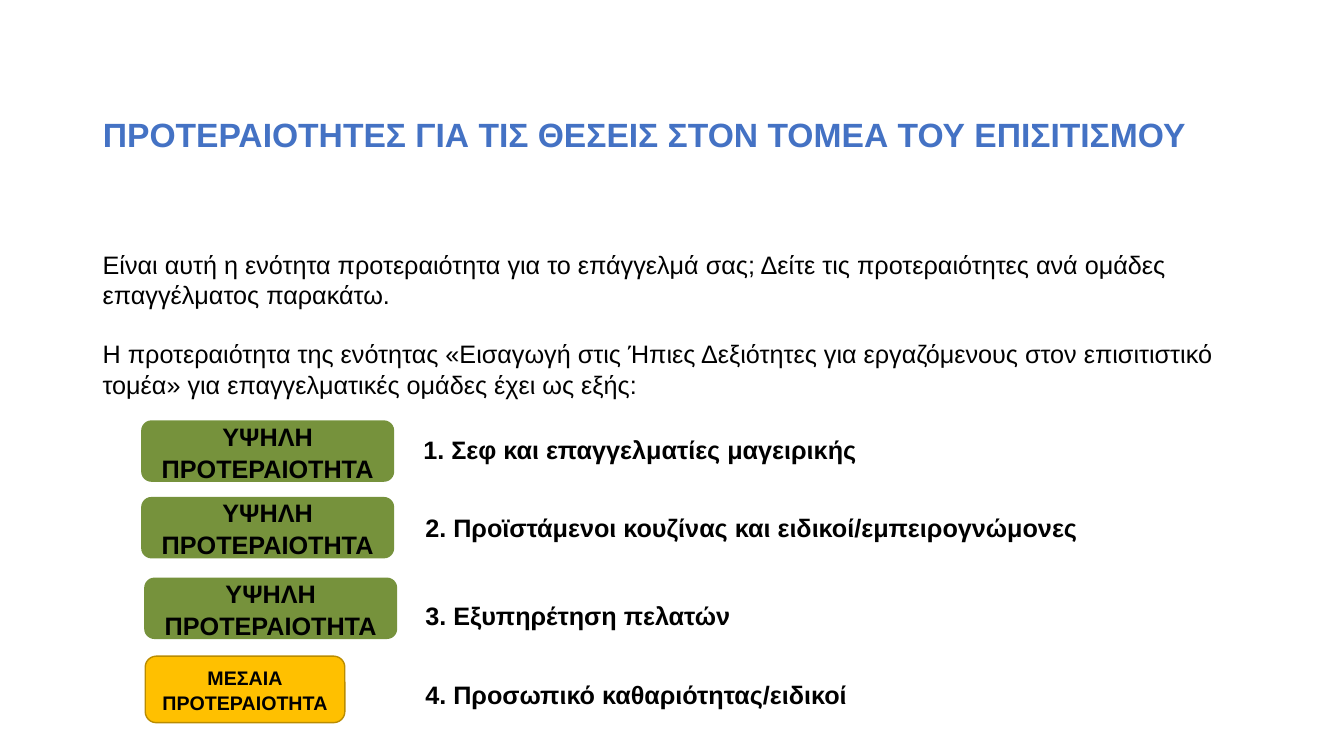
"""Builds the slide of training priorities for catering jobs."""
from dataclasses import dataclass

from pptx import Presentation
from pptx import util as u
from pptx.dml.color import RGBColor
from pptx.enum import shapes, text

PX = 9144
BLUE, BLACK, GREEN, AMBER, BROWN = "4472C4", "000000", "76923C", "FFC000", "BA8C00"
HIGH, MEDIUM = "ΥΨΗΛΗ ΠΡΟΤΕΡΑΙΟΤΗΤΑ", "ΜΕΣΑΙΑ ΠΡΟΤΕΡΑΙΟΤΗΤΑ"
TITLE = "ΠΡΟΤΕΡΑΙΟΤΗΤΕΣ ΓΙΑ ΤΙΣ ΘΕΣΕΙΣ ΣΤΟΝ ΤΟΜΕΑ ΤΟΥ ΕΠΙΣΙΤΙΣΜΟΥ"
INTRO = [
    "Είναι αυτή η ενότητα προτεραιότητα για το επάγγελμά σας; "
    "Δείτε τις προτεραιότητες ανά ομάδες επαγγέλματος παρακάτω.",
    "Η προτεραιότητα της ενότητας «Εισαγωγή στις Ήπιες Δεξιότητες για εργαζόμενους "
    "στον επισιτιστικό τομέα» για επαγγελματικές ομάδες έχει ως εξής:",
]


@dataclass(frozen=True)
class Box:
    left: int
    top: int
    width: int
    height: int

    def emu(self) -> list[int]:
        return [n * PX for n in (self.left, self.top, self.width, self.height)]


@dataclass(frozen=True)
class Job:
    name: str
    name_left: int
    name_top: int
    priority: str
    badge: Box
    fill: str = GREEN
    outline: str | None = None
    size: int = 18


JOBS = [
    Job("1. Σεφ και επαγγελματίες μαγειρικής", 410, 426, HIGH, Box(140, 417, 251, 61)),
    Job("2. Προϊστάμενοι κουζίνας και ειδικοί/εμπειρογνώμονες", 412, 503, HIGH,
        Box(140, 493, 251, 61)),
    Job("3. Εξυπηρέτηση πελατών", 412, 591, HIGH, Box(143, 573, 251, 61)),
    Job("4. Προσωπικό καθαριότητας/ειδικοί", 412, 669, MEDIUM,
        Box(144, 651, 198, 66), AMBER, BROWN, 14),
]


def rgb(value: str) -> RGBColor:
    return RGBColor.from_string(value)


def write(shape, lines: list[str], size: int, bold: bool = True, color: str = BLACK,
          align=text.PP_ALIGN.LEFT, anchor=text.MSO_ANCHOR.TOP,
          spacing: float = 1.0, gap: int = 0, bottom: int = 5) -> None:
    frame = shape.text_frame
    frame_format = {
        "word_wrap": True, "auto_size": text.MSO_AUTO_SIZE.NONE, "vertical_anchor": anchor,
        "margin_left": 10 * PX, "margin_right": 10 * PX,
        "margin_top": 5 * PX, "margin_bottom": bottom * PX,
    }
    for key, value in frame_format.items():
        setattr(frame, key, value)
    for index, line in enumerate(lines):
        paragraph = frame.add_paragraph() if index else frame.paragraphs[0]
        run = paragraph.add_run()
        run.text = line
        paragraph_format = {"alignment": align, "line_spacing": spacing,
                            "space_before": u.Pt(gap if index else 0)}
        for key, value in paragraph_format.items():
            setattr(paragraph, key, value)
        for key, value in {"name": "Arial", "size": u.Pt(size), "bold": bold}.items():
            setattr(run.font, key, value)
        run.font.color.rgb = rgb(color)


def add_job(slide, job: Job) -> None:
    badge = slide.shapes.add_shape(shapes.MSO_SHAPE.ROUNDED_RECTANGLE, *job.badge.emu())
    badge.shadow.inherit = False
    badge.fill.solid()
    badge.fill.fore_color.rgb = rgb(job.fill)
    if job.outline:
        badge.line.color.rgb = rgb(job.outline)
        badge.line.width = u.Pt(1)
    else:
        badge.line.fill.background()
    write(badge, [job.priority], job.size, align=text.PP_ALIGN.CENTER,
          anchor=text.MSO_ANCHOR.MIDDLE, spacing=1.07)
    name = slide.shapes.add_textbox(*Box(job.name_left, job.name_top, 830, 40).emu())
    write(name, [job.name], 18)


def main() -> None:
    deck = Presentation()
    deck.slide_width, deck.slide_height = 1333 * PX, 750 * PX
    slide = deck.slides.add_slide(deck.slide_layouts[5])
    title = slide.shapes.title
    title.left, title.top, title.width, title.height = Box(92, 79, 1150, 156).emu()
    write(title, [TITLE], 24, color=BLUE, anchor=text.MSO_ANCHOR.MIDDLE,
          spacing=0.9, bottom=48)
    intro = slide.shapes.add_textbox(*Box(92, 242, 1150, 169).emu())
    write(intro, INTRO, 18, bold=False, gap=21)
    for job in JOBS:
        add_job(slide, job)
    deck.save("out.pptx")


if __name__ == "__main__":
    main()
